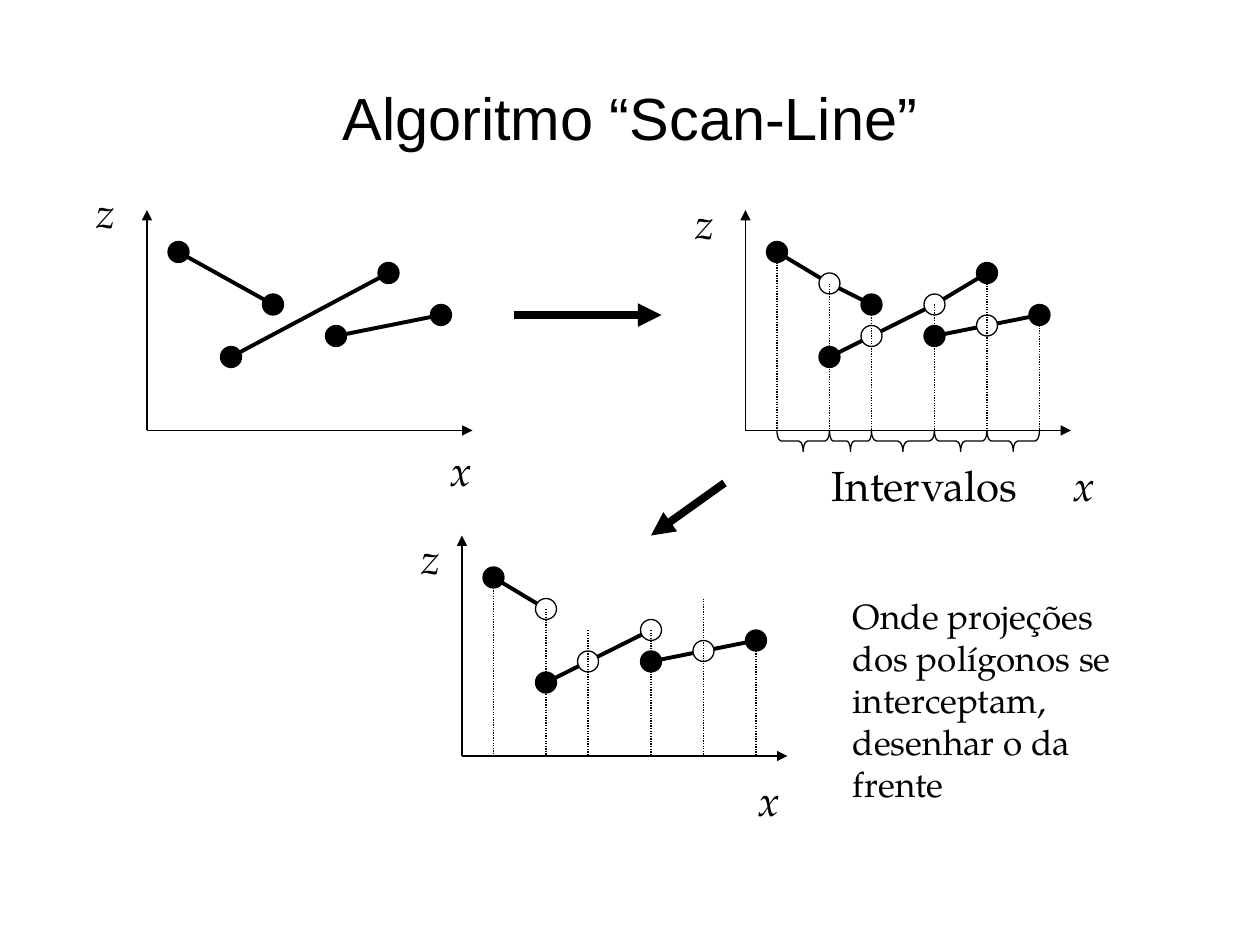
import itertools
import math
from dataclasses import dataclass

import pptx
import pptx.dml.color
import pptx.enum.dml
import pptx.enum.shapes
import pptx.enum.text
import pptx.oxml
import pptx.oxml.ns
import pptx.util
from pptx.util import Inches

BLACK = pptx.dml.color.RGBColor(0, 0, 0)
SERIF = "TeX Gyre Pagella"
UNIT = 1 / 12
AXIS_X, AXIS_Z = 31, 21
SHAPE = pptx.enum.shapes.MSO_SHAPE


@dataclass(frozen=True)
class Dot:
    x: int
    z: int
    solid: bool = True


@dataclass(frozen=True)
class Plot:
    left: int
    base: int
    lines: list[tuple[Dot, ...]]
    drops: list[tuple[int, int]]

    def place(self, x: float, z: float) -> tuple[float, float]:
        return self.left + x, self.base - z


@dataclass(frozen=True)
class Label:
    text: str
    left: float
    top: float
    width: float
    height: float = 0.5
    size: int = 24
    slant: bool = False
    wrap: bool = False


def grid(count: float) -> pptx.util.Length:
    return Inches(count * UNIT)


def draw_line(slide, start: tuple, end: tuple, weight: float = 0.75,
              arrow: bool = False, dotted: bool = False) -> None:
    line = slide.shapes.add_connector(
        pptx.enum.shapes.MSO_CONNECTOR.STRAIGHT,
        *(grid(value) for value in (*start, *end)))
    line.line.color.rgb = BLACK
    line.line.width = pptx.util.Pt(weight)
    if dotted:
        line.line.dash_style = pptx.enum.dml.MSO_LINE.ROUND_DOT
    props = line.element.spPr
    if arrow:
        tail = pptx.oxml.parse_xml(
            f'<a:tailEnd {pptx.oxml.ns.nsdecls("a")} type="triangle"/>')
        props.find(pptx.oxml.ns.qn("a:ln")).append(tail)
    props.append(pptx.oxml.parse_xml(
        f'<a:effectLst {pptx.oxml.ns.nsdecls("a")}/>'))


def draw_shape(slide, kind, left: float, top: float, width: float,
               height: float, solid: bool = False):
    shape = slide.shapes.add_shape(
        kind, grid(left), grid(top), grid(width), grid(height))
    shape.shadow.inherit = False
    if solid:
        shape.fill.solid()
        shape.fill.fore_color.rgb = BLACK
    else:
        shape.fill.background()
    shape.line.color.rgb = BLACK
    shape.line.width = pptx.util.Pt(0.75)
    return shape


def rim(dot: Dot, other: Dot) -> tuple[float, float]:
    if dot.solid:
        return dot.x, dot.z
    run, rise = other.x - dot.x, other.z - dot.z
    span = math.hypot(run, rise)
    return dot.x + run / span, dot.z + rise / span


def draw_plot(slide, plot: Plot) -> None:
    root = plot.place(0, 0)
    for tip in ((0, AXIS_Z), (AXIS_X, 0)):
        draw_line(slide, root, plot.place(*tip), arrow=True)
    for dots in plot.lines:
        for start, end in itertools.pairwise(dots):
            draw_line(slide, plot.place(*rim(start, end)),
                      plot.place(*rim(end, start)), 2.25)
        for dot in dots:
            x, y = plot.place(dot.x, dot.z)
            draw_shape(slide, SHAPE.OVAL, x - 1, y - 1, 2, 2, dot.solid)
    for x, z in plot.drops:
        draw_line(slide, plot.place(x, z), plot.place(x, 0), dotted=True)


def draw_braces(slide, plot: Plot) -> None:
    for (start, _), (end, _) in itertools.pairwise(plot.drops):
        gap = end - start
        x, y = plot.place((start + end) / 2, -1)
        brace = draw_shape(slide, SHAPE.LEFT_BRACE,
                           x - 1, y - gap / 2, 2, gap)
        brace.rotation = 270
        brace.adjustments[0] = gap / 24


def draw_label(slide, label: Label) -> None:
    box = slide.shapes.add_textbox(Inches(label.left), Inches(label.top),
                                   Inches(label.width), Inches(label.height))
    frame = box.text_frame
    frame.word_wrap = label.wrap
    frame.auto_size = pptx.enum.text.MSO_AUTO_SIZE.SHAPE_TO_FIT_TEXT
    frame.text = label.text
    font = frame.paragraphs[0].font
    font.name = SERIF
    font.size = pptx.util.Pt(label.size)
    font.italic = label.slant
    font.color.rgb = BLACK


def draw_title(slide, text: str) -> None:
    title = slide.shapes.title
    title.left, title.top = Inches(0.5), Inches(0.3)
    title.width, title.height = Inches(9), Inches(1.25)
    frame = title.text_frame
    frame.text = text
    frame.vertical_anchor = pptx.enum.text.MSO_ANCHOR.MIDDLE
    para = frame.paragraphs[0]
    para.alignment = pptx.enum.text.PP_ALIGN.CENTER
    para.font.name = "Arial"
    para.font.size = pptx.util.Pt(34)
    para.font.color.rgb = BLACK


HIGH = Dot(3, 17), Dot(12, 12)
LONG = Dot(8, 7), Dot(23, 15)
LOW = Dot(18, 9), Dot(28, 11)
HIGH_CUT = Dot(8, 14, False)
LONG_CUTS = Dot(12, 9, False), Dot(18, 12, False)
LOW_CUT = Dot(23, 10, False)
LOW_SPLIT = LOW[0], LOW_CUT, LOW[1]
DROPS = [(3, 17), (8, 14), (12, 12), (18, 12), (23, 15), (28, 11)]

WHOLE = Plot(14, 41, [HIGH, LONG, LOW], [])
SPLIT = Plot(71, 41, [(HIGH[0], HIGH_CUT, HIGH[1]),
                      (LONG[0], *LONG_CUTS, LONG[1]), LOW_SPLIT], DROPS)
FRONT = Plot(44, 72, [(HIGH[0], HIGH_CUT),
                      (LONG[0], *LONG_CUTS), LOW_SPLIT], DROPS)

LABELS = [
    *(Label("z", left, top, 0.35, slant=True)
      for left, top in ((0.67, 1.43), (5.42, 1.52), (3.25, 4.18))),
    *(Label("x", left, top, 0.37, slant=True)
      for left, top in ((3.48, 3.48), (8.42, 3.6), (5.92, 6.1))),
    Label("Intervalos", 6.5, 3.6, 1.68),
    Label("Onde projeções dos polígonos se interceptam, desenhar o da frente",
          6.67, 4.67, 2.5, 1.77, 20, wrap=True),
]


def main() -> None:
    deck = pptx.Presentation()
    deck.slide_width, deck.slide_height = Inches(10), Inches(7.5)
    slide = deck.slides.add_slide(deck.slide_layouts[5])
    draw_title(slide, "Algoritmo “Scan-Line”")
    for plot in (WHOLE, SPLIT, FRONT):
        draw_plot(slide, plot)
    draw_braces(slide, SPLIT)
    for start, end in (((49, 30), (63, 30)), ((69, 46), (62, 51))):
        draw_line(slide, start, end, 4.5, arrow=True)
    for label in LABELS:
        draw_label(slide, label)
    deck.save("out.pptx")


if __name__ == "__main__":
    main()
